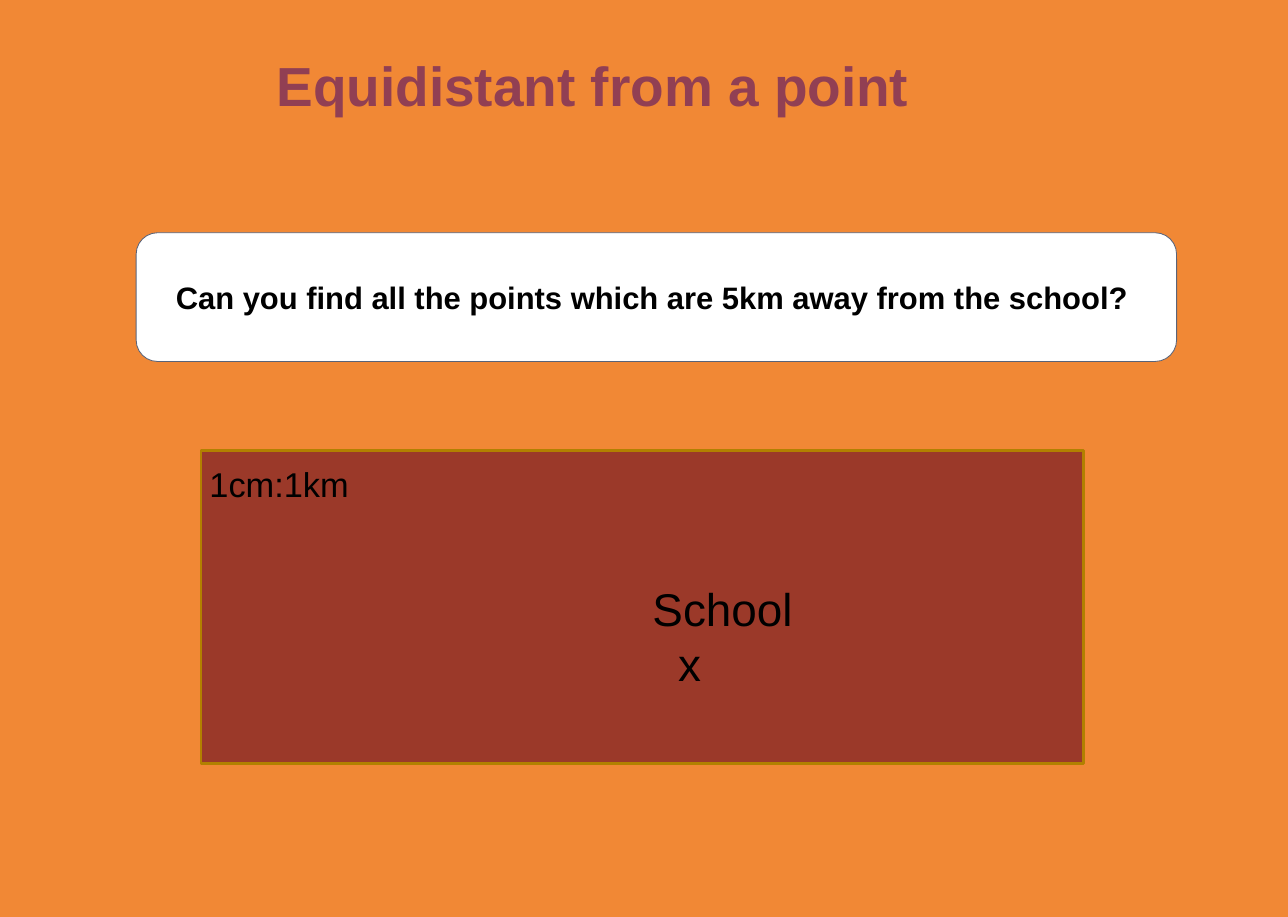
from pptx import Presentation
from pptx.dml.color import RGBColor
from pptx.enum.shapes import MSO_SHAPE
from pptx.enum.text import MSO_AUTO_SIZE, PP_ALIGN
from pptx.util import Inches, Pt

THEME = {
    "font": "Arial",
    "background": "F18835",
    "title": "913F53",
    "text": "000000",
    "card": ("FFFFFF", "5A6378", 0.75),
    "map": ("9B3929", "B28000", 2),
    "title_size": 48,
    "question_size": 27,
    "scale_size": 30,
    "school_size": 40,
}

# Content: panels as (shape, box, style)
PANELS = [
    (MSO_SHAPE.ROUNDED_RECTANGLE, (1.65, 2.82, 12.61, 1.56), "card"),
    (MSO_SHAPE.RECTANGLE, (2.44, 5.46, 10.69, 3.79), "map"),
]

# Content: labels as (lines with left indent, box, size, colour, alignment, bold)
LABELS = [
    ([("Can you find all the points which are 5km away from the school? ", 0)],
     (0.87, 3.32, 14.17, 0.56), "question_size", "text", PP_ALIGN.CENTER, True),
    ([("Equidistant from a point", 0)],
     (3.05, 0.58, 8.27, 0.56), "title_size", "title", PP_ALIGN.CENTER, True),
    ([("1cm:1km", 0)],
     (2.44, 5.56, 2.34, 0.61), "scale_size", "text", PP_ALIGN.LEFT, False),
    ([("School", 0), ("x", 0.31)],
     (7.81, 6.99, 2.34, 1.45), "school_size", "text", PP_ALIGN.LEFT, False),
]


def color(name):
    return RGBColor.from_string(name)


def add_panel(s, kind, box, style):
    fill, line, width = THEME[style]
    sp = s.shapes.add_shape(kind, *map(Inches, box))
    sp.shadow.inherit = False
    sp.fill.solid()
    sp.fill.fore_color.rgb = color(fill)
    sp.line.color.rgb = color(line)
    sp.line.width = Pt(width)


def add_label(s, lines, box, size, ink, align, bold):
    tf = s.shapes.add_textbox(*map(Inches, box)).text_frame
    tf.word_wrap = True
    tf.auto_size = MSO_AUTO_SIZE.SHAPE_TO_FIT_TEXT
    for i, (text, indent) in enumerate(lines):
        p = tf.add_paragraph() if i else tf.paragraphs[0]
        p.alignment = align
        p.font.name = THEME["font"]
        p.font.size = Pt(THEME[size])
        p.font.bold = bold
        p.font.color.rgb = color(THEME[ink])
        if indent:
            p._p.get_or_add_pPr().set("marL", str(Inches(indent)))
        p.add_run().text = text


prs = Presentation()
prs.slide_width, prs.slide_height = Inches(15.61), Inches(11.11)
s = prs.slides.add_slide(prs.slide_layouts[6])
s.background.fill.solid()
s.background.fill.fore_color.rgb = color(THEME["background"])

# Panels sit behind the labels
for panel in PANELS:
    add_panel(s, *panel)
for label in LABELS:
    add_label(s, *label)

prs.save("out.pptx")
